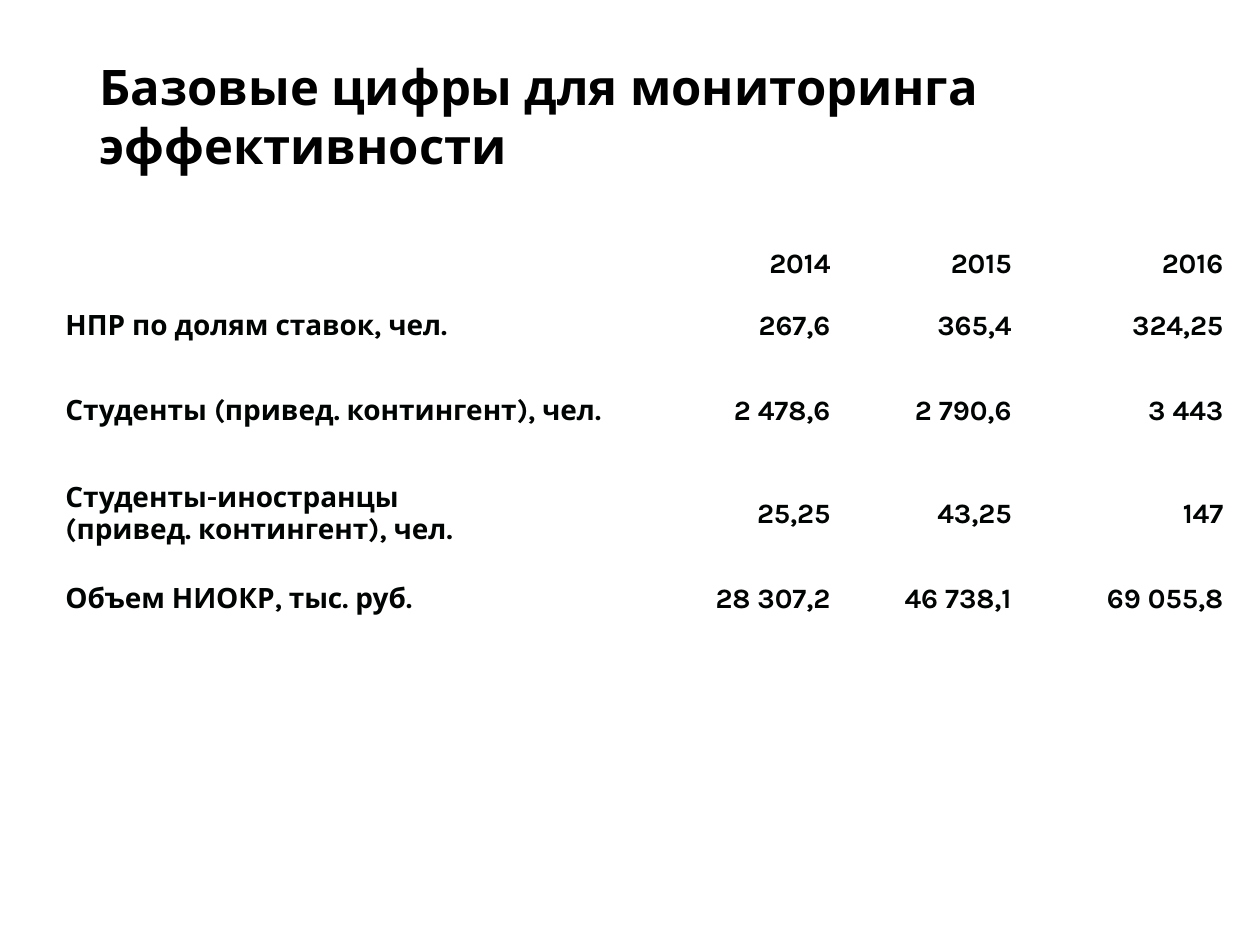
"""Build a slide with the base figures for efficiency monitoring."""
from pptx import Presentation
from pptx import util as u
from pptx.dml.color import RGBColor
from pptx.enum import text

FONT = "Karla"
COLUMN_WIDTHS = [340.5, 98, 103.5, 121]
ROW_HEIGHTS = [33, 38, 59, 59, 38]
ROWS = [
    ["", "2014", "2015", "2016"],
    ["НПР по долям ставок, чел.", "267,6", "365,4", "324,25"],
    ["Студенты (привед. контингент), чел.", "2 478,6", "2 790,6", "3 443"],
    ["Студенты-иностранцы\n(привед. контингент), чел.", "25,25", "43,25", "147"],
    ["Объем НИОКР, тыс. руб.", "28 307,2", "46 738,1", "69 055,8"],
]


def color(value):
    """Return the colour for a hex string."""
    return RGBColor.from_string(value)


def write(frame, content, size=16, fill="000403", align=text.PP_ALIGN.LEFT):
    """Write bold text into a frame, one paragraph for each line."""
    frame.text = content
    for paragraph in frame.paragraphs:
        paragraph.alignment = align
        paragraph.font.size = u.Pt(size)
        for run in paragraph.runs:
            run.font.name = FONT
            run.font.size = u.Pt(size)
            run.font.bold = True
            run.font.color.rgb = color(fill)


def add_title(slide, content):
    """Add the slide title."""
    box = slide.shapes.add_textbox(u.Pt(49.7), u.Pt(28.8), u.Pt(620.6), u.Pt(37.5))
    box.text_frame.word_wrap = True
    write(box.text_frame, content, size=28, fill="000000")


def format_cell(cell, is_header):
    """Set the margins, anchor and fill of a cell."""
    cell.margin_left = cell.margin_top = cell.margin_right = u.Pt(0.7)
    cell.margin_bottom = 0
    cell.vertical_anchor = text.MSO_ANCHOR.MIDDLE
    if is_header:
        cell.fill.solid()
        cell.fill.fore_color.rgb = color("FFFFFF")
    else:
        cell.fill.background()


def add_figures(slide):
    """Add the table of figures by year."""
    frame = slide.shapes.add_table(
        len(ROWS), len(COLUMN_WIDTHS), u.Pt(36.7), u.Pt(134),
        u.Pt(sum(COLUMN_WIDTHS)), u.Pt(sum(ROW_HEIGHTS)))
    table = frame.table
    table.first_row = table.horz_banding = False
    for column, width in zip(table.columns, COLUMN_WIDTHS):
        column.width = u.Pt(width)
    for index, (row, height, values) in enumerate(zip(table.rows, ROW_HEIGHTS, ROWS)):
        row.height = u.Pt(height)
        for position, (cell, value) in enumerate(zip(row.cells, values)):
            format_cell(cell, is_header=index == 0)
            align = text.PP_ALIGN.RIGHT if position else text.PP_ALIGN.LEFT
            write(cell.text_frame, value, align=align)


def main():
    """Build and save the presentation."""
    presentation = Presentation()
    presentation.slide_width, presentation.slide_height = u.Pt(720), u.Pt(540)
    slide = presentation.slides.add_slide(presentation.slide_layouts[6])
    add_figures(slide)
    add_title(slide, "Базовые цифры для мониторинга эффективности")
    presentation.save("out.pptx")


if __name__ == "__main__":
    main()
